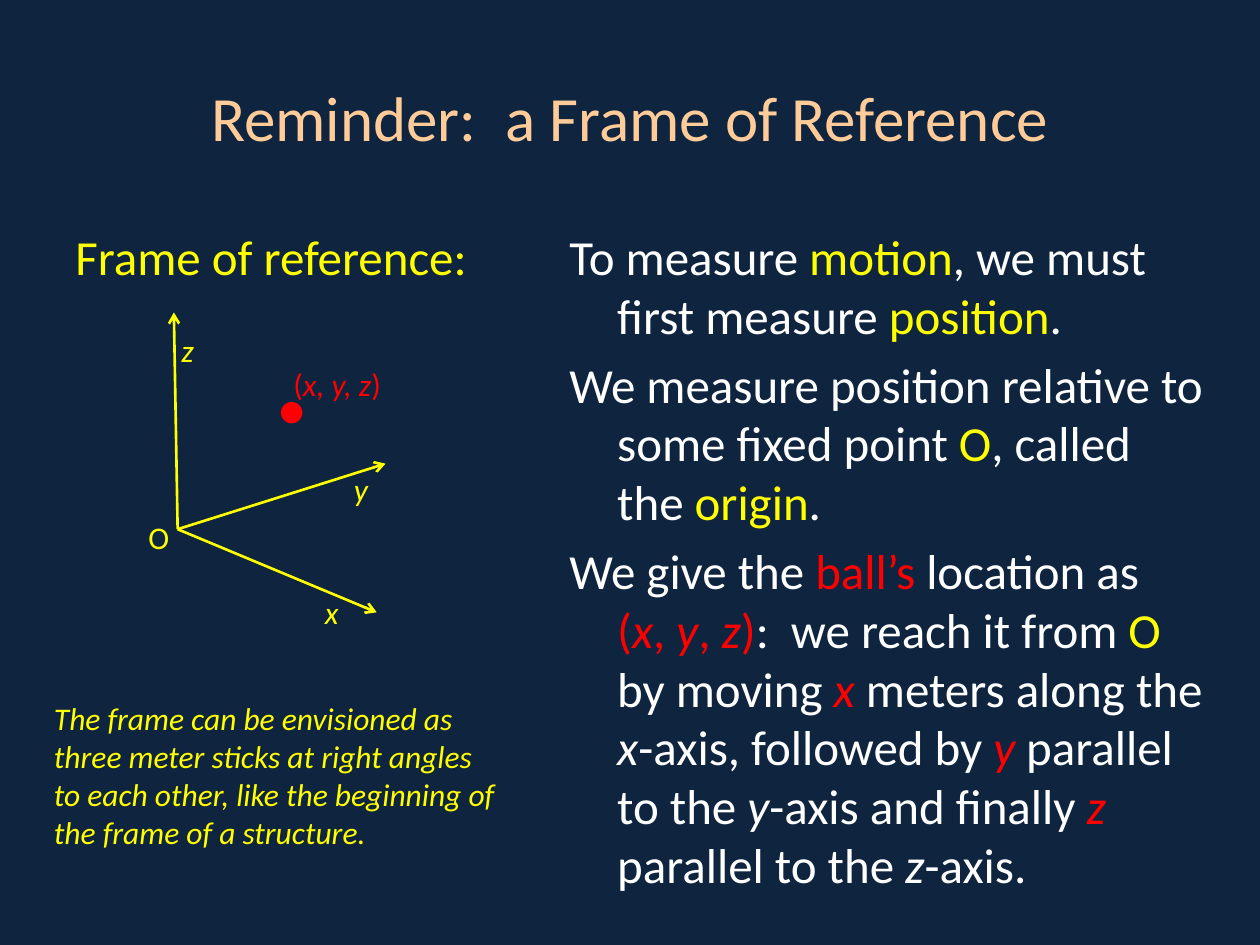
from lxml.etree import SubElement
from pptx import Presentation
from pptx.dml.color import RGBColor
from pptx.enum.shapes import MSO_CONNECTOR as Connector, MSO_SHAPE as Shape
from pptx.enum.text import MSO_ANCHOR as Anchor, PP_ALIGN as Align
from pptx.oxml.ns import qn
from pptx.util import Inches, Pt

COLORS = {
    "navy": "0F243E",
    "peach": "FFCC99",
    "yellow": "FFFF00",
    "white": "FFFFFF",
    "red": "FF0000",
}
COLUMNS, ROWS = 100, 75


def rgb(name):
    return RGBColor.from_string(COLORS[name])


class Sheet:
    """Draws on one slide; every length is in columns and rows of the grid."""

    font = "Calibri"
    hanging = Inches(0.38)

    def __init__(self, deck):
        self.column = deck.slide_width / COLUMNS
        self.row = deck.slide_height / ROWS
        self.slide = deck.slides.add_slide(deck.slide_layouts[6])
        self.shapes = self.slide.shapes
        fill = self.slide.background.fill
        fill.solid()
        fill.fore_color.rgb = rgb("navy")

    def place(self, *lengths):
        """Turn alternating columns and rows into slide units."""
        steps = (self.column, self.row) * 2
        return [round(n * step) for n, step in zip(lengths, steps)]

    def text(self, at, paragraphs, size, hang=False, align=Align.LEFT, anchor=Anchor.TOP):
        """Each paragraph is a list of (words, colour) or (words, colour, italic)."""
        frame = self.shapes.add_textbox(*self.place(*at)).text_frame
        frame.word_wrap = True
        frame.vertical_anchor = anchor
        for index, runs in enumerate(paragraphs):
            paragraph = frame.add_paragraph() if index else frame.paragraphs[0]
            paragraph.alignment = align
            if hang:
                paragraph.space_before = Pt(size * 0.2)
                properties = paragraph._p.get_or_add_pPr()
                properties.set("marL", str(self.hanging))
                properties.set("indent", str(-self.hanging))
            for words, color, *italic in runs:
                run = paragraph.add_run()
                run.text = words
                run.font.name = self.font
                run.font.size = Pt(size)
                run.font.italic = bool(italic)
                run.font.color.rgb = rgb(color)

    def arrow(self, start, end, color):
        axis = self.shapes.add_connector(Connector.STRAIGHT, *self.place(*start, *end))
        axis.line.color.rgb = rgb(color)
        axis.line.width = Pt(1.5)
        SubElement(axis.line._get_or_add_ln(), qn("a:tailEnd"), type="arrow")
        SubElement(axis._element.spPr, qn("a:effectLst"))

    def dot(self, at, color):
        ball = self.shapes.add_shape(Shape.OVAL, *self.place(*at))
        ball.shadow.inherit = False
        ball.fill.solid()
        ball.fill.fore_color.rgb = rgb(color)
        ball.line.fill.background()


EXPLANATION = [
    [("To measure ", "white"), ("motion", "yellow"),
     (", we must first measure ", "white"), ("position", "yellow"), (".", "white")],
    [("We measure position relative to some fixed point ", "white"), ("O", "yellow"),
     (", called the ", "white"), ("origin", "yellow"), (".", "white")],
    [("We give the ", "white"), ("ball’s", "red"), (" location as  ", "white"),
     ("(", "red"), ("x", "red", True), (", ", "red"), ("y", "red", True),
     (", ", "red"), ("z", "red", True), (")", "red"),
     (":  we reach it from ", "white"), ("O", "yellow"), (" by moving ", "white"),
     ("x", "red", True), (" meters along the ", "white"), ("x", "white", True),
     ("-axis, followed by ", "white"), ("y", "red", True),
     (" parallel to the ", "white"), ("y", "white", True),
     ("-axis and finally ", "white"), ("z", "red", True),
     (" parallel to the ", "white"), ("z", "white", True), ("-axis.", "white")],
]
REMARK = ("The frame can be envisioned as three meter sticks at right angles "
          "to each other, like the beginning of the frame of a structure.")
ORIGIN = (14.1, 42)
# axis name: (arrow tip, top left of its label)
AXES = {
    "z": ((13.8, 24.8), (13.4, 25.8)),
    "x": ((29.9, 48.6), (24.8, 46.6)),
    "y": ((30.6, 36.8), (27.1, 36.8)),
}
LABEL = (4.2, 4)


def main():
    deck = Presentation()
    deck.slide_width, deck.slide_height = Inches(10), Inches(7.5)
    sheet = Sheet(deck)

    sheet.text((5, 3, 90, 12.5), [[("Reminder:  a Frame of Reference", "peach")]], 36,
               align=Align.CENTER, anchor=Anchor.MIDDLE)
    sheet.text((5, 17.5, 38.3, 49.5), [[("Frame of reference:", "yellow")]], 28, hang=True)
    sheet.text((44.2, 17.5, 52.5, 55), EXPLANATION, 28, hang=True)
    sheet.text((3.3, 55, 37.5, 13.1), [[(REMARK, "yellow", True)]], 18)

    for name, (tip, corner) in AXES.items():
        sheet.arrow(ORIGIN, tip, "yellow")
        sheet.text((*corner, *LABEL), [[(name, "yellow", True)]], 18)
    sheet.text((10.8, 40.6, *LABEL), [[("O", "yellow")]], 18)

    sheet.dot((22.3, 31.9, 1.7, 1.7), "red")
    sheet.text((22.3, 28.5, 9.2, 4),
               [[("(", "red"), ("x, y, z", "red", True), (")", "red")]], 18)

    deck.save("out.pptx")


if __name__ == "__main__":
    main()
